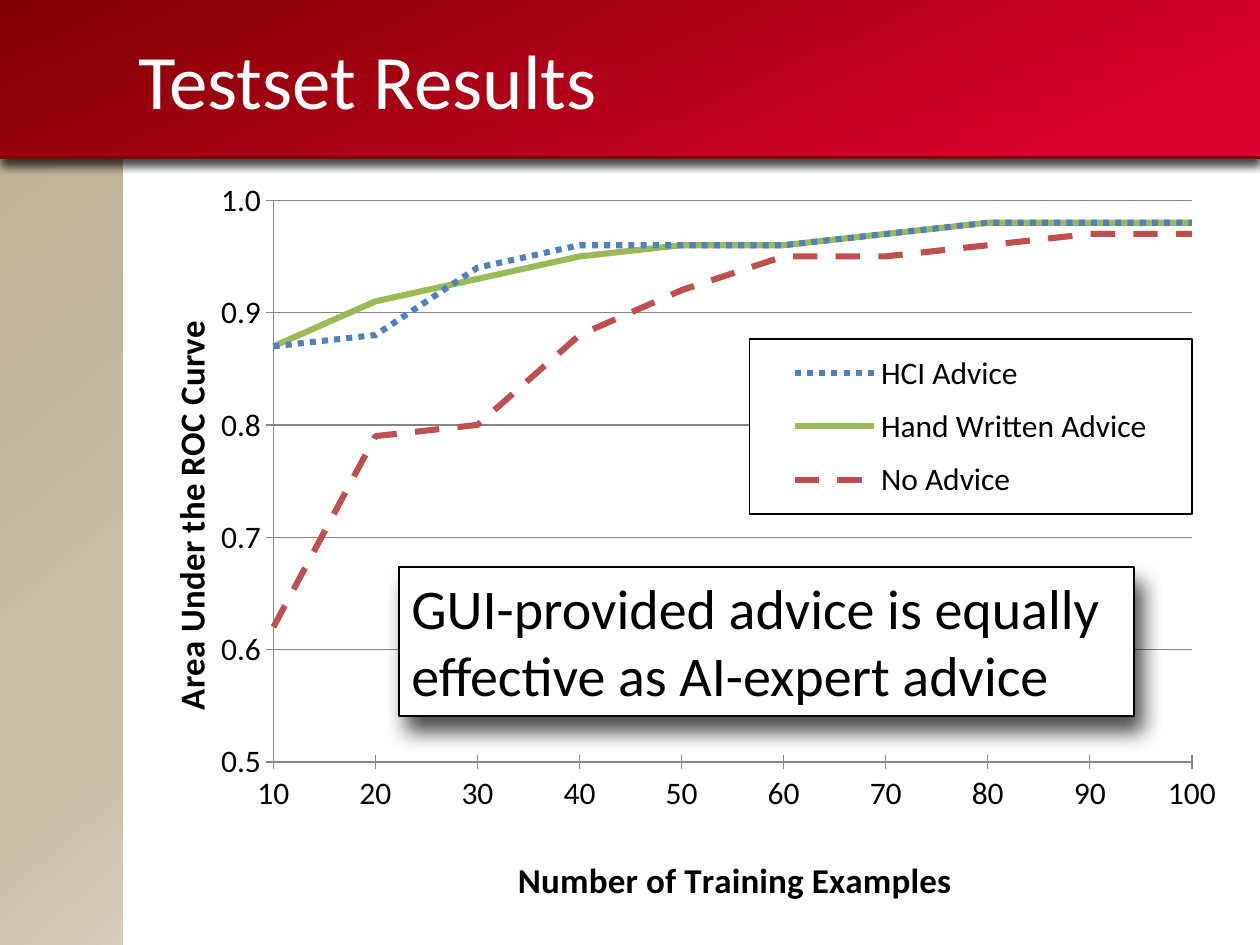
from lxml import etree
from pptx import Presentation
from pptx.chart.data import XyChartData
from pptx.dml.color import RGBColor
from pptx.enum.chart import XL_CHART_TYPE, XL_LEGEND_POSITION, XL_TICK_MARK
from pptx.enum.dml import MSO_LINE
from pptx.enum.shapes import MSO_CONNECTOR, MSO_SHAPE
from pptx.enum.text import MSO_ANCHOR, MSO_AUTO_SIZE, PP_ALIGN
from pptx.oxml import parse_xml
from pptx.oxml.ns import nsdecls, qn
from pptx.util import Inches, Pt

FONT = "Calibri"
COLUMNS, ROWS = 120, 90
CELL = Inches(10) / COLUMNS
EXAMPLES = range(10, 101, 10)
CURVES = [
    ("HCI Advice", "4F81BD", MSO_LINE.ROUND_DOT,
     [0.87, 0.88, 0.94, 0.96, 0.96, 0.96, 0.97, 0.98, 0.98, 0.98]),
    ("Hand Written Advice", "9BBB59", MSO_LINE.SOLID,
     [0.87, 0.91, 0.93, 0.95, 0.96, 0.96, 0.97, 0.98, 0.98, 0.98]),
    ("No Advice", "C0504D", MSO_LINE.DASH,
     [0.62, 0.79, 0.8, 0.88, 0.92, 0.95, 0.95, 0.96, 0.97, 0.97]),
]


def color(code):
    return RGBColor.from_string(code)


def grid(*cells):
    """Turn grid columns and rows into slide lengths."""
    return [round(cell * CELL) for cell in cells]


def style_font(font, size, code, bold=False):
    font.name, font.size, font.bold = FONT, Pt(size), bold
    font.color.rgb = color(code)


def style_line(line, code, width):
    line.color.rgb = color(code)
    line.width = Pt(width)


def add_rectangle(page, *cells):
    box = page.shapes.add_shape(MSO_SHAPE.RECTANGLE, *grid(*cells))
    box.shadow.inherit = False
    box.line.fill.background()
    return box


def fill_gradient(box, stops, angle):
    """Fill with (percent, hex) stops; the angle runs clockwise."""
    box.fill.gradient()
    box.fill.gradient_angle = 360 - angle
    stop_list = box.element.spPr.find(".//" + qn("a:gsLst"))
    for stop in list(stop_list):
        stop_list.remove(stop)
    for percent, code in stops:
        stop = etree.SubElement(stop_list, qn("a:gs"), pos=str(percent * 1000))
        etree.SubElement(stop, qn("a:srgbClr"), val=code)


def add_shadow(box, opacity, blur, distance, angle):
    effects = box.element.spPr.find(qn("a:effectLst"))
    shadow = etree.SubElement(
        effects, qn("a:outerShdw"), blurRad=str(Pt(blur)), dist=str(Pt(distance)),
        dir=str(angle * 60000), algn="t", rotWithShape="0")
    shade = etree.SubElement(shadow, qn("a:srgbClr"), val="000000")
    etree.SubElement(shade, qn("a:alpha"), val=str(opacity * 1000))


def add_frame(page):
    sidebar = add_rectangle(page, 0, 13, 11.7, ROWS - 13)
    fill_gradient(sidebar, [(0, "BFB198"), (79, "CBBFAA"), (100, "D7CDBC")], 50)
    header = add_rectangle(page, 0, 0, COLUMNS, 15)
    fill_gradient(header, [(0, "800000"), (87, "D8002E")], 66)
    add_shadow(header, 72, 5, 4, 90)
    rule = page.shapes.add_connector(MSO_CONNECTOR.STRAIGHT, *grid(0, 15, COLUMNS, 15))
    style_line(rule.line, "800000", 2)
    etree.SubElement(rule.element.spPr, qn("a:effectLst"))


def add_title(page, text):
    title = page.shapes.title
    title.left, title.top, title.width, title.height = grid(12, 0, 104, 15)
    frame = title.text_frame
    frame.text = text
    frame.vertical_anchor = MSO_ANCHOR.MIDDLE
    para = frame.paragraphs[0]
    para.alignment = PP_ALIGN.LEFT
    style_font(para.runs[0].font, 44, "FFFFFF")
    title.element.getparent().append(title.element)  # in front of the header


def set_layout(parent, index, left, top, width=None, height=None, inner=False):
    """Place a chart part by shares of the chart's size."""
    for layout in parent.findall(qn("c:layout")):
        parent.remove(layout)
    layout = etree.Element(qn("c:layout"))
    manual = etree.SubElement(layout, qn("c:manualLayout"))
    settings = [("layoutTarget", "inner" if inner else None),
                ("xMode", "edge"), ("yMode", "edge"),
                ("x", left), ("y", top), ("w", width), ("h", height)]
    for name, value in settings:
        if value is not None:
            etree.SubElement(manual, qn("c:" + name), val=str(value))
    parent.insert(index, layout)


def style_axis(axis, title, start, end, step, number_format, place):
    axis.minimum_scale, axis.maximum_scale, axis.major_unit = start, end, step
    axis.major_tick_mark = XL_TICK_MARK.CROSS
    axis.minor_tick_mark = XL_TICK_MARK.NONE
    axis.tick_labels.number_format = number_format
    axis.tick_labels.number_format_is_linked = False
    style_line(axis.format.line, "868686", 0.75)
    frame = axis.axis_title.text_frame
    frame.text = title
    style_font(frame.paragraphs[0].runs[0].font, 20, "000000", bold=True)
    set_layout(axis.axis_title.element, 1, *place)


def add_legend(chart):
    chart.has_legend = True
    chart.legend.position = XL_LEGEND_POSITION.RIGHT
    chart.legend.include_in_layout = True
    legend = chart.element.find(".//" + qn("c:legend"))
    set_layout(legend, 1, 0.55, 0.22, 0.39, 0.24)
    legend.find(qn("c:overlay")).addnext(parse_xml(
        f'<c:spPr {nsdecls("c", "a")}>'
        '<a:solidFill><a:srgbClr val="FFFFFF"/></a:solidFill>'
        '<a:ln w="9525"><a:solidFill><a:srgbClr val="000000"/></a:solidFill></a:ln>'
        '</c:spPr>'))


def add_curves(page):
    data = XyChartData()
    for name, _, _, areas in CURVES:
        series = data.add_series(name)
        for count, area in zip(EXAMPLES, areas):
            series.add_data_point(count, area)
    chart = page.shapes.add_chart(
        XL_CHART_TYPE.XY_SCATTER_LINES_NO_MARKERS, *grid(12, 17, 108, 70), data).chart
    chart.has_title = False
    style_font(chart.font, 18, "000000")
    plot = chart.plots[0]
    plot.vary_by_categories = False
    for series, (_, code, dash, _) in zip(plot.series, CURVES):
        style_line(series.format.line, code, 3.5)
        series.format.line.dash_style = dash
    across, up = chart.category_axis, chart.value_axis
    style_axis(across, "Number of Training Examples", 10, 100, 10, "#,##0", (0.34, 0.92))
    style_axis(up, "Area Under the ROC Curve", 0.5, 1, 0.1, "#,##0.0", (0.03, 0.19))
    up.axis_title.element.find(".//" + qn("a:bodyPr")).set("rot", "-5400000")
    across.has_major_gridlines = False
    up.has_major_gridlines = True
    style_line(up.major_gridlines.format.line, "868686", 0.75)
    set_layout(chart.element.find(".//" + qn("c:plotArea")), 0,
               0.13, 0.03, 0.81, 0.77, inner=True)
    add_legend(chart)


def add_callout(page, text):
    box = add_rectangle(page, 38, 54, 70, 14.2)
    box.fill.solid()
    box.fill.fore_color.rgb = color("FFFFFF")
    style_line(box.line, "000000", 0.75)
    add_shadow(box, 70, 12, 9, 65)
    frame = box.text_frame
    frame.text = text
    frame.word_wrap = True
    frame.auto_size = MSO_AUTO_SIZE.SHAPE_TO_FIT_TEXT
    frame.vertical_anchor = MSO_ANCHOR.TOP
    para = frame.paragraphs[0]
    para.alignment = PP_ALIGN.LEFT
    style_font(para.runs[0].font, 32, "000000")


def main():
    deck = Presentation()
    deck.slide_width, deck.slide_height = grid(COLUMNS, ROWS)
    page = deck.slides.add_slide(deck.slide_layouts[5])
    add_frame(page)
    add_title(page, "Testset Results")
    add_curves(page)
    add_callout(page, "GUI-provided advice is equally effective as AI-expert advice")
    deck.save("out.pptx")


if __name__ == "__main__":
    main()
